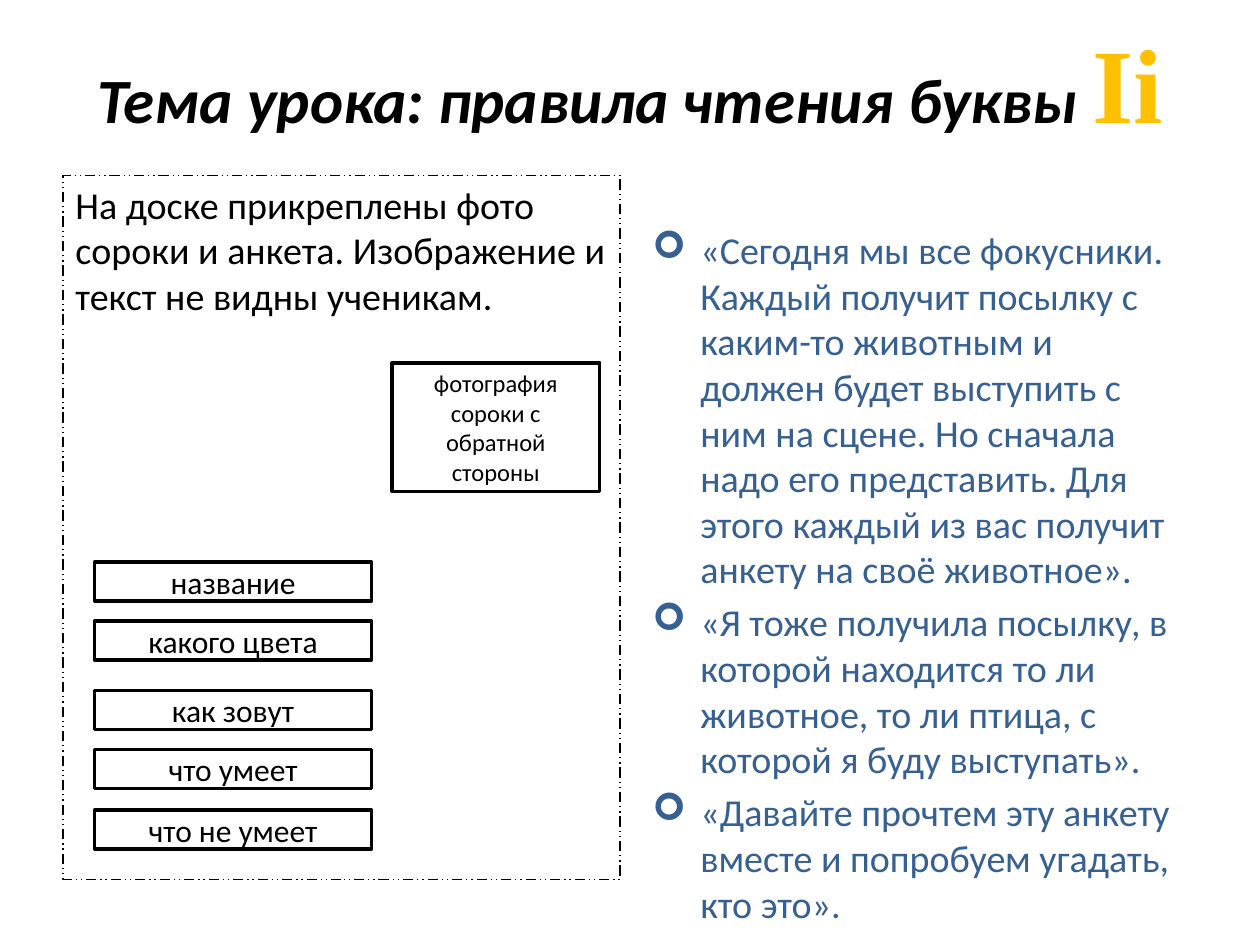
from lxml.etree import SubElement
from pptx import Presentation
from pptx.dml.color import RGBColor
from pptx.enum.dml import MSO_LINE
from pptx.enum.shapes import MSO_SHAPE
from pptx.enum.text import MSO_ANCHOR, PP_ALIGN
from pptx.oxml.ns import qn
from pptx.util import Inches, Pt


def add_box(left, top, width, height, line_width=None, anchor=MSO_ANCHOR.MIDDLE):
    position = [Inches(value) for value in (left, top, width, height)]
    if line_width is None:
        shape = slide.shapes.add_textbox(*position)
    else:
        shape = slide.shapes.add_shape(MSO_SHAPE.RECTANGLE, *position)
        shape.shadow.inherit = False
        shape.fill.solid()
        shape.fill.fore_color.rgb = RGBColor.from_string("FFFFFF")
        shape.line.color.rgb = RGBColor.from_string("000000")
        shape.line.width = Pt(line_width)
    shape.text_frame.word_wrap = True
    shape.text_frame.vertical_anchor = anchor
    return shape


def add_run(paragraph, text, size, color="000000", font="Calibri", bold=False, italic=False):
    run = paragraph.add_run()
    run.text = text
    run.font.size = Pt(size)
    run.font.name = font
    run.font.bold = bold
    run.font.italic = italic
    run.font.color.rgb = RGBColor.from_string(color)


presentation = Presentation()
presentation.slide_width = Inches(10)
presentation.slide_height = Inches(7.5)
slide = presentation.slides.add_slide(presentation.slide_layouts[6])

margin = 0.5
column_width = 4.42
body_size = 21.7
body_spacing = Pt(4.3)

title = add_box(margin, 0.3, 10 - 2 * margin, 0.69)
paragraph = title.text_frame.paragraphs[0]
paragraph.alignment = PP_ALIGN.CENTER
add_run(paragraph, "Тема урока: правила чтения буквы ", 36, bold=True, italic=True)
add_run(paragraph, "Ii", 60.3, "FFC000", "Times New Roman", bold=True)

board = add_box(margin, 1.39, column_width, 5.59, 0.75, MSO_ANCHOR.TOP)
board.fill.background()
board.line.dash_style = MSO_LINE.DASH_DOT_DOT
paragraph = board.text_frame.paragraphs[0]
paragraph.alignment = PP_ALIGN.LEFT
paragraph.space_before = body_spacing
add_run(
    paragraph,
    "На доске прикреплены фото сороки и анкета. Изображение и текст не видны ученикам.",
    body_size,
)

speeches = [
    "«Сегодня мы все фокусники. Каждый получит посылку с каким-то животным и должен будет "
    "выступить с ним на сцене. Но сначала надо его представить. Для этого каждый из вас "
    "получит анкету на своё животное».",
    "«Я тоже получила посылку, в которой находится то ли животное, то ли птица, "
    "с которой я буду выступать».",
    "«Давайте прочтем эту анкету вместе и попробуем угадать, кто это».",
]
speech_box = add_box(10 - margin - column_width, 1.75, column_width, 4.95, anchor=MSO_ANCHOR.TOP)
speech_frame = speech_box.text_frame
for index, speech in enumerate(speeches):
    paragraph = speech_frame.add_paragraph() if index else speech_frame.paragraphs[0]
    paragraph.space_before = body_spacing
    properties = paragraph._p.get_or_add_pPr()
    properties.set("marL", str(Inches(0.38)))
    properties.set("indent", str(-Inches(0.38)))
    SubElement(properties, qn("a:buFont")).set("typeface", "Wingdings")
    SubElement(properties, qn("a:buChar")).set("char", "➢")
    add_run(paragraph, speech, body_size, "376092")

cards = [("фотография сороки с обратной стороны", 14, 3.11, 2.88, 1.65, 1.02)]
questions = [
    ("название", 4.46),
    ("какого цвета", 4.93),
    ("как зовут", 5.48),
    ("что умеет", 5.95),
    ("что не умеет", 6.43),
]
cards += [(question, 18, 0.75, top, 2.2, 0.31) for question, top in questions]
for text, size, left, top, width, height in cards:
    card = add_box(left, top, width, height, 2)
    paragraph = card.text_frame.paragraphs[0]
    paragraph.alignment = PP_ALIGN.CENTER
    add_run(paragraph, text, size)

presentation.save("out.pptx")
